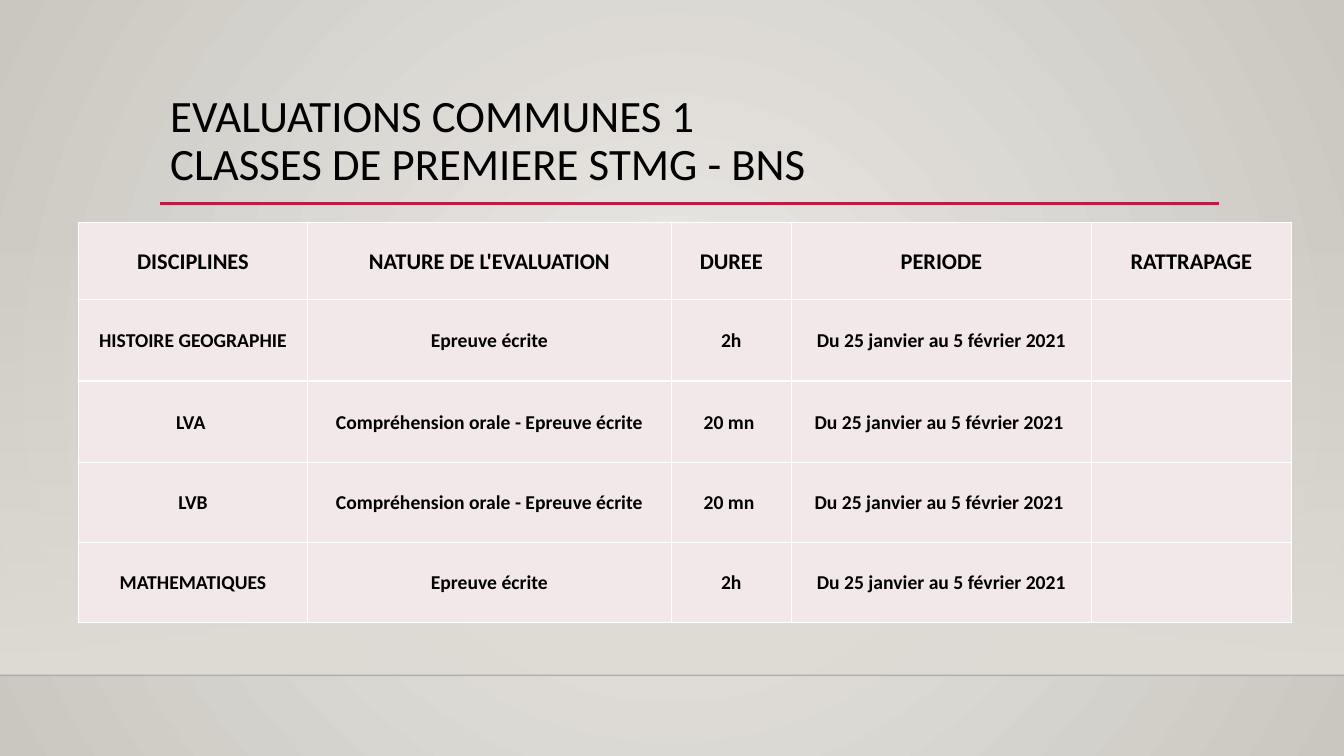
from lxml import etree
from pptx import Presentation
from pptx.dml.color import RGBColor
from pptx.enum.shapes import MSO_CONNECTOR, MSO_SHAPE
from pptx.enum.text import MSO_ANCHOR, PP_ALIGN
from pptx.oxml.ns import qn
from pptx.util import Cm, Pt

BLACK = RGBColor(0x00, 0x00, 0x00)
WHITE = RGBColor(0xFF, 0xFF, 0xFF)
CRIMSON = RGBColor(0xB7, 0x1E, 0x42)
PALE_PINK = RGBColor(0xF3, 0xE8, 0xE9)
WALL_CENTER = RGBColor(0xEC, 0xEA, 0xE7)
WALL_EDGE = RGBColor(0xCA, 0xC7, 0xC1)
WALL_GLOW = RGBColor(0xDF, 0xDB, 0xD5)

FONT = "Calibri"
PAGE_WIDTH, PAGE_HEIGHT = 33.87, 19.05
FLOOR_TOP = 17.02
TABLE_LEFT, TABLE_TOP = 1.98, 5.61
COLUMN_WIDTHS = [5.77, 9.17, 3.02, 7.57, 5.03]
ROW_HEIGHTS = [1.93, 2.06, 2.06, 2.01, 2.01]

TITLE_LINES = ["EVALUATIONS COMMUNES 1", "CLASSES DE PREMIERE STMG - BNS"]
SCHEDULE = [
    ["DISCIPLINES", "NATURE DE L'EVALUATION", "DUREE", "PERIODE", "RATTRAPAGE"],
    ["HISTOIRE GEOGRAPHIE", "Epreuve écrite", "2h",
     "Du 25 janvier au 5 février 2021", ""],
    ["LVA ", "Compréhension orale - Epreuve écrite", "20 mn ",
     "Du 25 janvier au 5 février 2021 ", ""],
    ["LVB", "Compréhension orale - Epreuve écrite", "20 mn ",
     "Du 25 janvier au 5 février 2021 ", ""],
    ["MATHEMATIQUES", "Epreuve écrite", "2h",
     "Du 25 janvier au 5 février 2021", ""],
]


def add_color(parent, color, opacity=100):
    color_node = etree.SubElement(parent, qn("a:srgbClr"), val=str(color))
    if opacity < 100:
        etree.SubElement(color_node, qn("a:alpha"), val=str(opacity * 1000))


def reset_gradient(owner, stops):
    """Replace the stops of the owner's gradient, drop its direction, return it."""
    gradient = owner.element.find(".//" + qn("a:gradFill"))
    for child in list(gradient):
        gradient.remove(child)
    stop_list = etree.SubElement(gradient, qn("a:gsLst"))
    for position, color, opacity in stops:
        stop = etree.SubElement(stop_list, qn("a:gs"), pos=str(position * 1000))
        add_color(stop, color, opacity)
    return gradient


def paint_background(slide):
    slide.background.fill.gradient()
    gradient = reset_gradient(
        slide, [(0, WALL_CENTER, 100), (100, WALL_EDGE, 100)])
    circle = etree.SubElement(gradient, qn("a:path"), path="circle")
    etree.SubElement(circle, qn("a:fillToRect"),
                     l="50000", t="50000", r="50000", b="50000")


def add_wall_glow(slide):
    glow = slide.shapes.add_shape(
        MSO_SHAPE.RECTANGLE, Cm(0), Cm(TABLE_TOP),
        Cm(PAGE_WIDTH), Cm(FLOOR_TOP - TABLE_TOP))
    glow.shadow.inherit = False
    glow.line.fill.background()
    glow.fill.gradient()
    gradient = reset_gradient(glow, [(0, WALL_GLOW, 0), (100, WALL_GLOW, 100)])
    etree.SubElement(gradient, qn("a:lin"), ang="5400000", scaled="0")


def add_rule(slide, left, right, top, color, width, opacity=100):
    rule = slide.shapes.add_connector(
        MSO_CONNECTOR.STRAIGHT, Cm(left), Cm(top), Cm(right), Cm(top))
    rule.line.width = Pt(width)
    rule.line.fill.solid()
    rule.line.color.rgb = color
    properties = rule.element.spPr
    if opacity < 100:
        tint = properties.find(".//" + qn("a:srgbClr"))
        etree.SubElement(tint, qn("a:alpha"), val=str(opacity * 1000))
    etree.SubElement(properties, qn("a:effectLst"))


def add_run(paragraph, text, size, bold=False):
    run = paragraph.add_run()
    run.text = text
    run.font.name = FONT
    run.font.size = Pt(size)
    run.font.bold = bold
    run.font.color.rgb = BLACK


def add_title(slide):
    frame = slide.shapes.add_textbox(
        Cm(4.04), Cm(2.24), Cm(26.67), Cm(2.92)).text_frame
    frame.word_wrap = True
    frame.vertical_anchor = MSO_ANCHOR.TOP
    paragraph = frame.paragraphs[0]
    paragraph.line_spacing = 0.9
    for index, line in enumerate(TITLE_LINES):
        if index:
            paragraph.add_line_break()
        add_run(paragraph, line, 32)


def add_borders(cell):
    """Draw white borders; they must precede the fill in the cell properties."""
    properties = cell._tc.get_or_add_tcPr()
    for index, side in enumerate(["lnL", "lnR", "lnT", "lnB"]):
        border = etree.Element(qn("a:" + side), w=str(Pt(1)))
        add_color(etree.SubElement(border, qn("a:solidFill")), WHITE)
        properties.insert(index, border)


def fill_cell(cell, text, size):
    cell.fill.solid()
    cell.fill.fore_color.rgb = PALE_PINK
    add_borders(cell)
    if not text:
        return
    cell.vertical_anchor = MSO_ANCHOR.MIDDLE
    cell.margin_left = cell.margin_right = cell.margin_top = Cm(0.03)
    cell.margin_bottom = Cm(0)
    paragraph = cell.text_frame.paragraphs[0]
    paragraph.alignment = PP_ALIGN.CENTER
    add_run(paragraph, text, size, bold=True)


def add_schedule(slide):
    table = slide.shapes.add_table(
        len(ROW_HEIGHTS), len(COLUMN_WIDTHS), Cm(TABLE_LEFT), Cm(TABLE_TOP),
        Cm(sum(COLUMN_WIDTHS)), Cm(sum(ROW_HEIGHTS))).table
    for column, width in zip(table.columns, COLUMN_WIDTHS):
        column.width = Cm(width)
    for row, height in zip(table.rows, ROW_HEIGHTS):
        row.height = Cm(height)
    for row_index, texts in enumerate(SCHEDULE):
        size = 14 if row_index else 16
        for column_index, text in enumerate(texts):
            fill_cell(table.cell(row_index, column_index), text, size)


def main():
    presentation = Presentation()
    presentation.slide_width = Cm(PAGE_WIDTH)
    presentation.slide_height = Cm(PAGE_HEIGHT)
    slide = presentation.slides.add_slide(presentation.slide_layouts[6])
    paint_background(slide)
    add_wall_glow(slide)
    add_rule(slide, 0, PAGE_WIDTH, FLOOR_TOP, BLACK, 1, opacity=20)
    add_rule(slide, 4.04, 30.73, 5.13, CRIMSON, 2.5)
    add_title(slide)
    add_schedule(slide)
    presentation.save("out.pptx")


if __name__ == "__main__":
    main()
